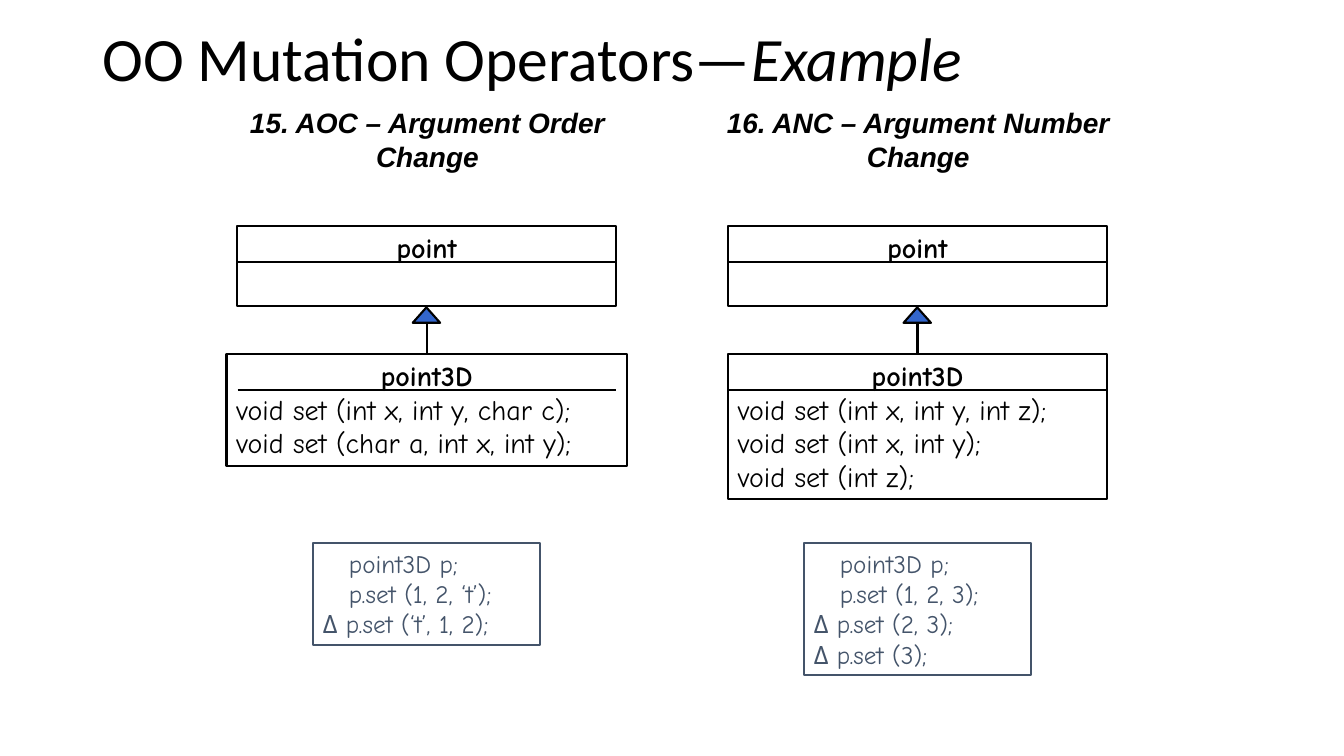
import pptx
import pptx.dml.color
import pptx.enum.shapes
import pptx.enum.text
import pptx.oxml.ns
import pptx.util
from lxml import etree

Pt = pptx.util.Pt
SHAPES = pptx.enum.shapes.MSO_SHAPE
ALIGN = pptx.enum.text.PP_ALIGN
ANCHOR = pptx.enum.text.MSO_ANCHOR
BLACK, SLATE, BLUE = "000000", "44546A", "3366CC"
CODE_FONT = "Comic Neue"
DELTA_INDENT = 18.6  # lines without a delta start here


def color(hex_string):
    return pptx.dml.color.RGBColor.from_string(hex_string)


def add_run(paragraph, text, font, size, hue, bold=False, italic=False):
    run = paragraph.add_run()
    run.text = text
    run.font.name = font
    run.font.size = Pt(size)
    run.font.color.rgb = color(hue)
    run.font.bold = bold
    run.font.italic = italic


def next_paragraph(frame, index):
    return frame.add_paragraph() if index else frame.paragraphs[0]


def add_outline(slide, kind, left, top, width, height, line, fill=None):
    outline = slide.shapes.add_shape(kind, Pt(left), Pt(top), Pt(width), Pt(height))
    outline.shadow.inherit = False
    if fill:
        outline.fill.solid()
        outline.fill.fore_color.rgb = color(fill)
    else:
        outline.fill.background()
    outline.line.color.rgb = color(line)
    outline.line.width = Pt(1.5)
    outline.text_frame.word_wrap = True
    outline.text_frame.vertical_anchor = ANCHOR.TOP
    return outline


def add_line(slide, x1, y1, x2, y2):
    rule = slide.shapes.add_connector(
        pptx.enum.shapes.MSO_CONNECTOR.STRAIGHT, Pt(x1), Pt(y1), Pt(x2), Pt(y2))
    rule.line.color.rgb = color(BLACK)
    rule.line.width = Pt(1.5)
    etree.SubElement(rule.element.spPr, pptx.oxml.ns.qn("a:effectLst"))


def add_title(slide, left, top, width, height):
    title = slide.shapes.title
    title.left, title.top, title.width, title.height = map(Pt, (left, top, width, height))
    frame = title.text_frame
    frame.auto_size = pptx.enum.text.MSO_AUTO_SIZE.NONE
    frame.word_wrap = True
    frame.vertical_anchor = ANCHOR.MIDDLE
    paragraph = frame.paragraphs[0]
    paragraph.alignment = ALIGN.LEFT
    paragraph.line_spacing = 0.9
    add_run(paragraph, "OO Mutation Operators—", "Calibri", 44, BLACK)
    add_run(paragraph, "Example", "Calibri", 44, BLACK, italic=True)


def add_heading(slide, text, left, top, width, height):
    heading = slide.shapes.add_textbox(Pt(left), Pt(top), Pt(width), Pt(height))
    heading.text_frame.word_wrap = True
    paragraph = heading.text_frame.paragraphs[0]
    paragraph.alignment = ALIGN.CENTER
    add_run(paragraph, text, "Arial", 20, BLACK, bold=True, italic=True)


def add_class(slide, name, methods, center, top, width, height, rule_width):
    """UML class: bold name, dividing rule, methods."""
    box = add_outline(slide, SHAPES.RECTANGLE, center - width / 2, top, width, height, BLACK)
    for index, text in enumerate([name, *methods]):
        paragraph = next_paragraph(box.text_frame, index)
        paragraph.alignment = ALIGN.LEFT if index else ALIGN.CENTER
        add_run(paragraph, text, CODE_FONT, 20, BLACK, bold=index == 0)
    add_line(slide, center - rule_width / 2, top + 26,
             center + rule_width / 2, top + 26)


def add_mutants(slide, calls, left, top, width, height):
    """Client code, with a delta before each mutated call."""
    box = add_outline(slide, SHAPES.RECTANGLE, left, top, width, height, SLATE)
    for index, text in enumerate(calls):
        paragraph = next_paragraph(box.text_frame, index)
        paragraph.alignment = ALIGN.LEFT
        if not text.startswith("Δ"):
            paragraph._p.get_or_add_pPr().set("marL", str(Pt(DELTA_INDENT)))
        add_run(paragraph, text, CODE_FONT, 18, SLATE)


def add_operator(slide, operator, left, top, width):
    """One column: heading, inheritance diagram, mutated calls."""
    center = left + width / 2 - 0.5
    add_heading(slide, operator["heading"], left, top, width, 55.4)
    add_class(slide, "point", [], center, top + 89.3, 270.7, 57, 270)

    # Inheritance arrow
    add_outline(slide, SHAPES.ISOSCELES_TRIANGLE, center - 10, top + 147.6, 19.6, 11, BLACK, BLUE)
    add_line(slide, center, top + 159, center, top + 180)

    add_class(slide, "point3D", operator["methods"], center, top + 180.7,
              operator["class_width"], 32 + 24 * len(operator["methods"]), 270)
    add_mutants(slide, operator["calls"], center - 81.2, top + 316,
                162, 7.8 + 21.6 * len(operator["calls"]))


OPERATORS = [
    {"heading": "15. AOC – Argument Order Change",
     "class_width": 286,
     "methods": ["void set (int x, int y, char c);", "void set (char a, int x, int y);"],
     "calls": ["point3D p;", "p.set (1, 2, ‘t’);", "Δ p.set (‘t’, 1, 2);"]},
    {"heading": "16. ANC – Argument Number Change",
     "class_width": 270.7,
     "methods": ["void set (int x, int y, int z);", "void set (int x, int y);",
                 "void set (int z);"],
     "calls": ["point3D p;", "p.set (1, 2, 3);", "Δ p.set (2, 3);", "Δ p.set (3);"]},
]


def main():
    deck = pptx.Presentation()
    deck.slide_width, deck.slide_height = Pt(960), Pt(540)
    slide = deck.slides.add_slide(deck.slide_layouts[5])
    add_title(slide, 66, -8, 828, 104.4)
    for column, operator in enumerate(OPERATORS):
        add_operator(slide, operator, 140.4 + 350.6 * column, 72, 329.8)
    deck.save("out.pptx")


if __name__ == "__main__":
    main()
